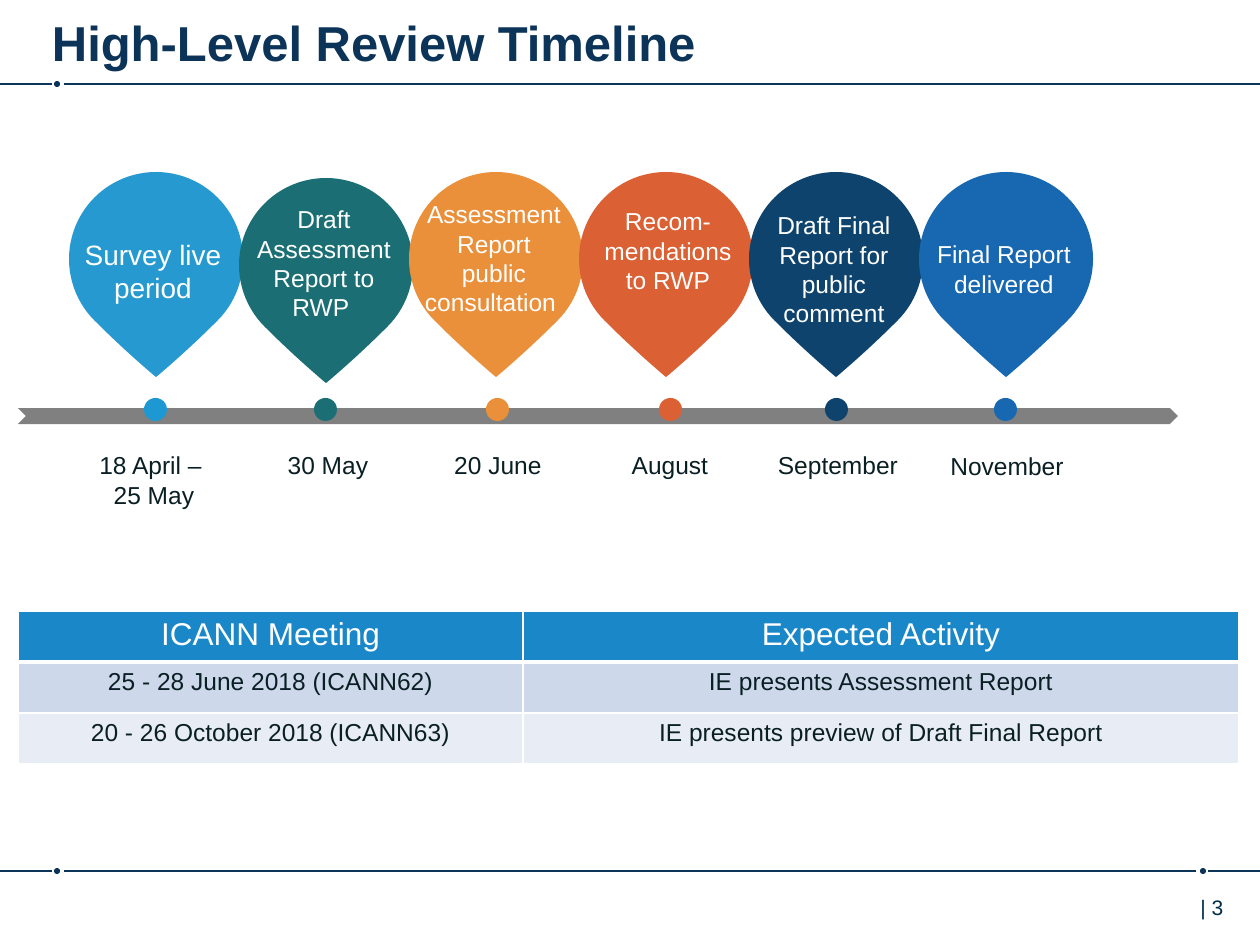
from lxml.etree import SubElement
from pptx import Presentation
from pptx.dml.color import RGBColor
from pptx.enum.shapes import MSO_CONNECTOR, MSO_SHAPE
from pptx.enum.text import PP_ALIGN
from pptx.oxml.ns import qn
from pptx.util import Emu, Pt

COLORS = {
    "navy": "0C3458", "number": "002B49", "ink": "0A1F24", "white": "FFFFFF",
    "bar": "808080", "header": "1A87C9", "row_dark": "CDD9EB", "row_light": "E8EDF5",
    "sky": "2599D0", "sky_dot": "1D98D3", "teal": "1B6F74", "amber": "EA903A",
    "orange": "DB6033", "deep": "0D436C", "blue": "1768B1",
}
FONT = "Arial"
TITLE = "High-Level Review Timeline"

# label, text size, label left and top, drop top, drop colour, dot colour, dot left,
# date, date left and top
MILESTONES = [
    ("Survey live period", 16, 71, 231, 172, "sky", "sky_dot", 144,
     "18 April – \n25 May", 72, 444),
    ("Draft Assessment Report to RWP ", 14, 242, 198, 178, "teal", "teal", 314,
     "30 May", 246, 444),
    ("Assessment Report public consultation ", 14, 412, 193, 172, "amber", "amber", 486,
     "20 June", 416, 444),
    ("Recom- mendations to RWP", 14, 586, 200, 172, "orange", "orange", 659,
     "August", 588, 444),
    ("Draft Final Report for public comment", 14, 752, 204, 172, "deep", "deep", 825,
     "September", 756, 444),
    ("Final Report delivered", 14, 922, 233, 172, "blue", "blue", 994,
     "November", 925, 445),
]
DROP_LEFT, DROP_STEP, DROP_SIZE = 69, 170, 174
DOT_TOP, DOT_SIZE, LABEL_WIDTH = 398, 23, 164

TABLE_ROWS = [
    ("ICANN Meeting", "Expected Activity"),
    ("25 - 28 June 2018 (ICANN62)", "IE presents Assessment Report"),
    ("20 - 26 October 2018 (ICANN63)", "IE presents preview of Draft Final Report"),
]
ROW_STYLES = [("header", 18, "white"), ("row_dark", 14, "ink"), ("row_light", 14, "ink")]
COLUMN_WIDTHS, ROW_HEIGHT = (505, 716), 51

# rule height, line spans, dot centres
RULES = [
    (84, [(0, 52), (64, 1260)], [57]),
    (871, [(0, 52), (64, 1196), (1208, 1260)], [57, 1203]),
]
RULE_DOT = 6


def px(value):
    return Emu(round(value * 914400 / 126))


def color(name):
    return RGBColor.from_string(COLORS[name])


def write(text_frame, text, size, color_name, align=PP_ALIGN.CENTER, bold=False):
    text_frame.text = text
    for paragraph in text_frame.paragraphs:
        paragraph.alignment = align
        for run in paragraph.runs:
            run.font.name = FONT
            run.font.size = Pt(size)
            run.font.bold = bold
            run.font.color.rgb = color(color_name)


def add_text(slide, box, *args, **options):
    text_frame = slide.shapes.add_textbox(*map(px, box)).text_frame
    text_frame.word_wrap = True
    write(text_frame, *args, **options)
    return text_frame


def add_filled(slide, kind, box, color_name):
    shape = slide.shapes.add_shape(kind, *map(px, box))
    shape.shadow.inherit = False
    shape.fill.solid()
    shape.fill.fore_color.rgb = color(color_name)
    shape.line.fill.background()
    return shape


def add_rules(slide):
    for y, spans, centres in RULES:
        for start, end in spans:
            line = slide.shapes.add_connector(
                MSO_CONNECTOR.STRAIGHT, px(start), px(y), px(end), px(y))
            line.line.color.rgb = color("navy")
            line.line.width = Pt(1)
            SubElement(line._element.spPr, qn("a:effectLst"))
        for x in centres:
            box = (x - RULE_DOT / 2, y - RULE_DOT / 2, RULE_DOT, RULE_DOT)
            add_filled(slide, MSO_SHAPE.OVAL, box, "navy")


def add_timeline(slide):
    add_filled(slide, MSO_SHAPE.CHEVRON, (18, 408, 1160, 16), "bar")
    for index, milestone in enumerate(MILESTONES):
        (label, size, label_left, label_top, drop_top, drop_color,
         dot_color, dot_left, date, date_left, date_top) = milestone
        drop_left = DROP_LEFT + index * DROP_STEP
        drop = add_filled(slide, MSO_SHAPE.TEAR,
                          (drop_left, drop_top, DROP_SIZE, DROP_SIZE), drop_color)
        drop.adjustments[0] = 0.96
        drop.rotation = 135
        add_filled(slide, MSO_SHAPE.OVAL, (dot_left, DOT_TOP, DOT_SIZE, DOT_SIZE), dot_color)
        add_text(slide, (label_left, label_top, LABEL_WIDTH, 131), label, size, "white")
        date_height = 72 if "\n" in date else 43
        add_text(slide, (date_left, date_top, LABEL_WIDTH, date_height), date, 14, "ink")


def set_borders(cell, bottom_width, top_width):
    """Draw white borders; widths are in points."""
    properties = cell._tc.get_or_add_tcPr()
    widths = {"lnL": 1, "lnR": 1, "lnT": top_width, "lnB": bottom_width}
    for tag, width in widths.items():
        line = SubElement(properties, qn(f"a:{tag}"), w=str(Pt(width)))
        fill = SubElement(line, qn("a:solidFill"))
        SubElement(fill, qn("a:srgbClr"), val=COLORS["white"])


def add_meetings(slide):
    table = slide.shapes.add_table(
        len(TABLE_ROWS), len(COLUMN_WIDTHS), px(18), px(611),
        px(sum(COLUMN_WIDTHS)), px(ROW_HEIGHT * len(TABLE_ROWS))).table
    for column, width in zip(table.columns, COLUMN_WIDTHS):
        column.width = px(width)
    for index, (texts, style) in enumerate(zip(TABLE_ROWS, ROW_STYLES)):
        fill, size, text_color = style
        table.rows[index].height = px(ROW_HEIGHT)
        for cell, text in zip(table.rows[index].cells, texts):
            write(cell.text_frame, text, size, text_color)
            set_borders(cell, 3 if index == 0 else 1, 3 if index == 1 else 1)
            cell.fill.solid()
            cell.fill.fore_color.rgb = color(fill)


def main():
    presentation = Presentation()
    presentation.slide_width, presentation.slide_height = px(1260), px(945)
    slide = presentation.slides.add_slide(presentation.slide_layouts[6])
    add_rules(slide)
    add_text(slide, (1188, 888, 72, 50), "| 3", 12, "number", align=PP_ALIGN.LEFT)
    add_timeline(slide)
    title = add_text(slide, (52, 6, 1104, 62), TITLE, 28, "navy",
                     align=PP_ALIGN.LEFT, bold=True)
    title.margin_left = title.margin_right = 0
    add_meetings(slide)
    presentation.save("out.pptx")


if __name__ == "__main__":
    main()
